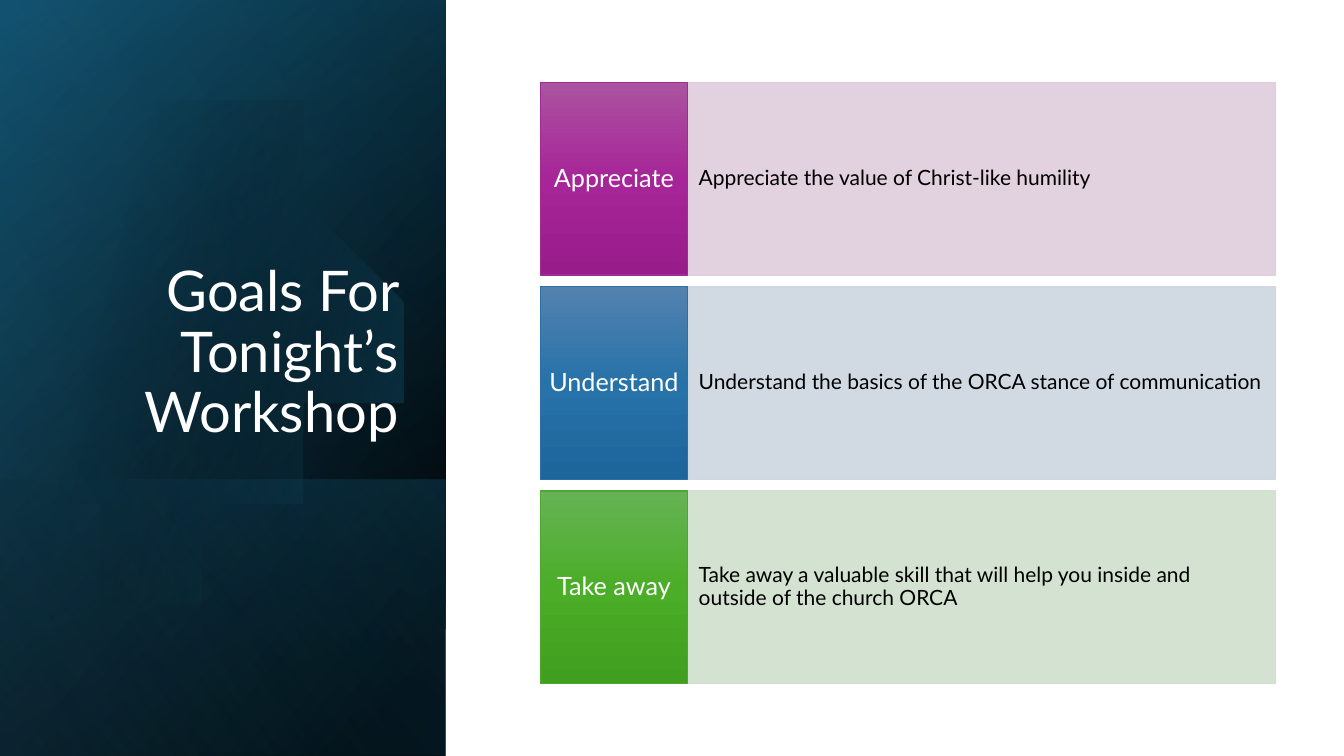
from dataclasses import dataclass

from lxml import etree
from pptx import Presentation
from pptx.dml.color import RGBColor
from pptx.enum.shapes import MSO_SHAPE
from pptx.enum.text import MSO_ANCHOR, PP_ALIGN
from pptx.oxml.ns import qn
from pptx.util import Inches, Pt

RECT = MSO_SHAPE.RECTANGLE
LEFT, MID, RIGHT = PP_ALIGN.LEFT, PP_ALIGN.CENTER, PP_ALIGN.RIGHT
CENTER, BOTTOM = MSO_ANCHOR.MIDDLE, MSO_ANCHOR.BOTTOM
FONT = "Lato"

Stop = tuple[float, str, float]  # position, colour, opacity, in percent
Point = tuple[float, float]


@dataclass
class Panel:
    left: float
    top: float
    width: float
    height: float
    stops: list[Stop]
    angle: float


@dataclass
class Goal:
    label: str
    text: str
    tint: str
    edge: str
    shades: tuple[str, str, str]


FULL = (-1.54, 1.54, 7.5, 4.42)
BASE = Panel(*FULL, [(8, "000000", 100), (100, "104862", 100)], 50)
GLOW = Panel(*FULL, [(0, "000000", 0), (99, "156082", 46)], 30)
FOOT = Panel(0.84, 3.92, 2.74, 4.42,
             [(2, "156082", 29), (100, "000000", 30)], 130)
SHEEN = Panel(*FULL, [(0, "000000", 0), (99, "46B1E1", 11)], 120)

# Each disc segment is one point (a line) or three points (a curve).
START = (1.49, 1.1)
DISC: list[list[Point]] = [
    [(2.46, 1.12), (3.35, 1.77), (3.63, 2.75)],
    [(3.98, 3.97), (3.28, 5.23), (2.07, 5.58)],
    [(1.31, 5.8), (0.53, 5.61), (-0.03, 5.14)],
    [(-0.15, 5.03)],
    [(-0.15, 1.75)],
    [(0, 1.61)],
    [(0.23, 1.42), (0.5, 1.28), (0.8, 1.19)],
    [(1.03, 1.13), (1.26, 1.1), START],
]
DISC_STOPS: list[Stop] = [(29, "000000", 0), (100, "156082", 43)]

GOALS = [
    Goal("Appreciate", "Appreciate the value of Christ-like humility",
         "DFCDDC", "A02B93", ("AC53A0", "A62598", "991C8B")),
    Goal("Understand",
         "Understand the basics of the ORCA stance of communication",
         "CDD6E0", "2C71A4", ("5382AF", "2772A9", "1D669C")),
    Goal("Take away",
         "Take away a valuable skill that will help you inside and "
         "outside of the church ORCA",
         "D0E1CD", "4EA72E", ("66B354", "4BAD28", "409F1E")),
]
TOP, STEP, HIGH = 0.82, 2.025, 1.91
LABEL_X, LABEL_W, TEXT_X, TEXT_W = 5.36, 1.46, 6.82, 5.83


def color(code: str) -> RGBColor:
    return RGBColor.from_string(code)


def fade(node, percent: float) -> None:
    """Set the opacity of a colour element."""
    etree.SubElement(node, qn("a:alpha")).set("val", str(round(percent * 1000)))


def blend(shape, stops: list[Stop], angle: float) -> None:
    """Fill a shape with a linear gradient."""
    shape.fill.background()
    old = shape.element.spPr.find(qn("a:noFill"))
    grad = etree.Element(qn("a:gradFill"), rotWithShape="1")
    group = etree.SubElement(grad, qn("a:gsLst"))
    for place, code, alpha in stops:
        stop = etree.SubElement(group, qn("a:gs"), pos=str(place * 1000))
        tone = etree.SubElement(stop, qn("a:srgbClr"), val=code)
        if alpha < 100:
            fade(tone, alpha)
    etree.SubElement(grad, qn("a:lin"), ang=str(angle * 60000), scaled="0")
    old.getparent().replace(old, grad)


def add_rect(slide, left: float, top: float, width: float, height: float):
    shape = slide.shapes.add_shape(
        RECT, Inches(left), Inches(top), Inches(width), Inches(height))
    shape.shadow.inherit = False
    return shape


def add_panel(slide, panel: Panel) -> None:
    shape = add_rect(slide, panel.left, panel.top, panel.width, panel.height)
    blend(shape, panel.stops, panel.angle)
    shape.line.fill.background()
    shape.rotation = 90
    shape.element.spPr.find(qn("a:xfrm")).set("flipH", "1")


def curve(start: Point, bend: list[Point], count: int = 16) -> list[Point]:
    """Return points along a cubic curve."""
    points = []
    for i in range(1, count + 1):
        t = i / count
        parts = ((1 - t) ** 3, 3 * t * (1 - t) ** 2, 3 * t * t * (1 - t), t ** 3)
        x, y = (sum(w * p[axis] for w, p in zip(parts, [start, *bend]))
                for axis in (0, 1))
        points.append((x, y))
    return points


def add_disc(slide) -> None:
    points = [START]
    for part in DISC:
        points += curve(points[-1], part) if len(part) == 3 else part
    pen = slide.shapes.build_freeform(*START, scale=float(Inches(1)))
    pen.add_line_segments(points[1:], close=True)
    shape = pen.convert_to_shape()
    shape.shadow.inherit = False
    blend(shape, DISC_STOPS, 14)
    shape.line.fill.background()


def write(shape, text: str, *, size: float, tone: str, align, anchor=CENTER,
          side: float = 0.1, edge: float = 0.05) -> None:
    frame = shape.text_frame
    frame.word_wrap = True
    frame.vertical_anchor = anchor
    frame.margin_left = frame.margin_right = Inches(side)
    frame.margin_top = frame.margin_bottom = Inches(edge)
    para = frame.paragraphs[0]
    para.alignment = align
    para.line_spacing = 0.9
    run = para.add_run()
    run.text = text
    run.font.name = FONT
    run.font.size = Pt(size)
    run.font.color.rgb = color(tone)


def add_goal(slide, goal: Goal, top: float) -> None:
    body = add_rect(slide, TEXT_X, top, TEXT_W, HIGH)
    body.fill.solid()
    body.fill.fore_color.rgb = body.line.color.rgb = color(goal.tint)
    body.line.width = Pt(1)
    for tone in body.element.spPr.iter(qn("a:srgbClr")):
        fade(tone, 90)
    write(body, goal.text, size=15, tone="000000", align=LEFT,
          side=0.11, edge=0.49)

    label = add_rect(slide, LABEL_X, top, LABEL_W, HIGH)
    stops = [(i * 50, code, 100) for i, code in enumerate(goal.shades)]
    blend(label, stops, 90)
    label.line.color.rgb = color(goal.edge)
    label.line.width = Pt(1)
    write(label, goal.label, size=18, tone="FFFFFF", align=MID,
          side=0.08, edge=0.19)


def main() -> None:
    deck = Presentation()
    deck.slide_width, deck.slide_height = Inches(13.33), Inches(7.5)
    slide = deck.slides.add_slide(deck.slide_layouts[6])
    for panel in (BASE, GLOW, FOOT):
        add_panel(slide, panel)
    add_disc(slide)
    add_panel(slide, SHEEN)
    title = slide.shapes.add_textbox(
        Inches(0.64), Inches(1.84), Inches(3.41), Inches(2.62))
    write(title, "Goals For Tonight’s Workshop", size=40, tone="FFFFFF",
          align=RIGHT, anchor=BOTTOM)
    for i, goal in enumerate(GOALS):
        add_goal(slide, goal, TOP + i * STEP)
    deck.save("out.pptx")


if __name__ == "__main__":
    main()
